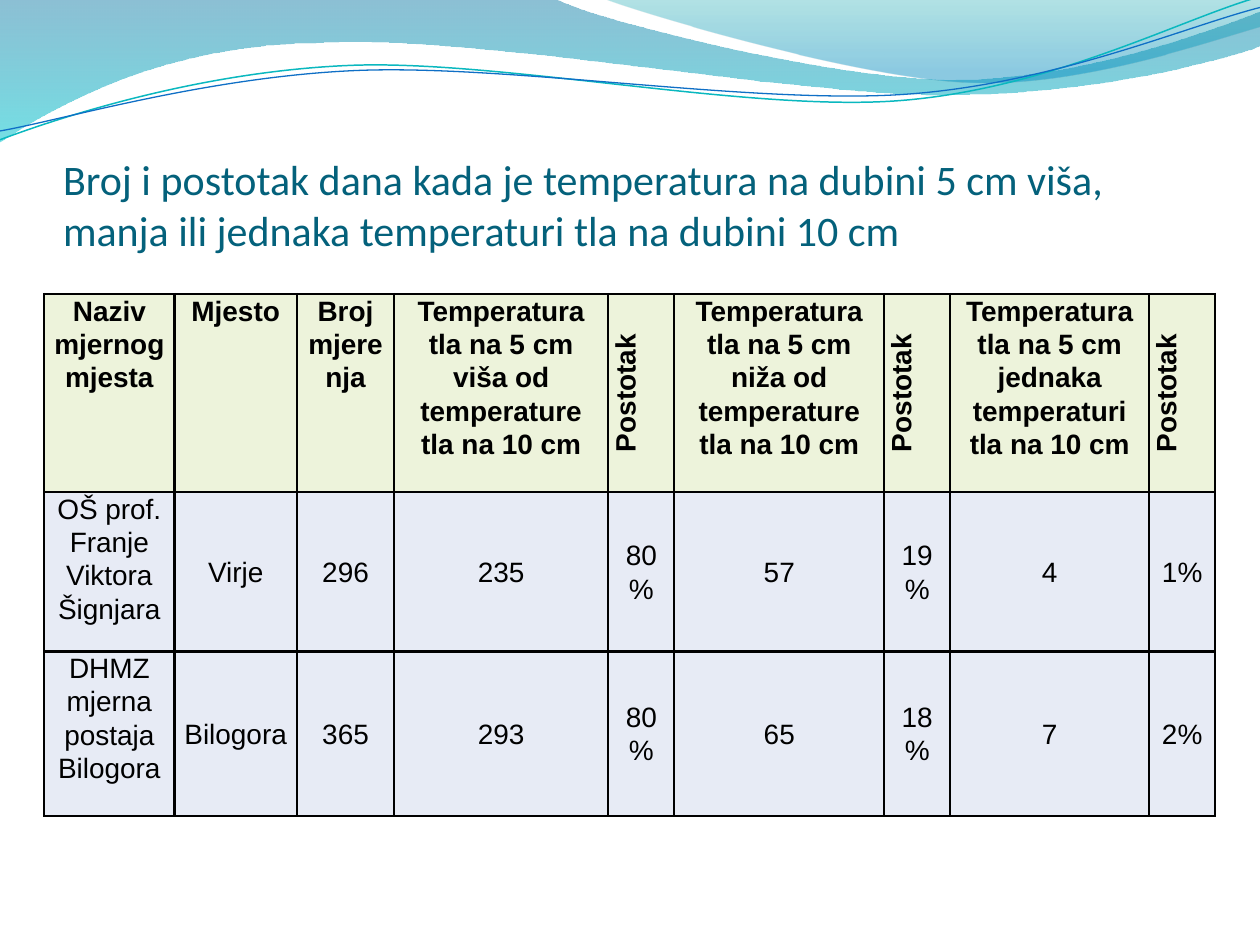
import math

import pptx
import pptx.dml.color
import pptx.enum.text
import pptx.oxml
import pptx.oxml.ns
import pptx.util

RGBColor = pptx.dml.color.RGBColor
Align = pptx.enum.text.PP_ALIGN
Anchor = pptx.enum.text.MSO_ANCHOR
qn = pptx.oxml.ns.qn
NAMESPACE = pptx.oxml.ns.nsdecls("a")

BLACK = RGBColor(0x00, 0x00, 0x00)
TITLE_BLUE = RGBColor(0x04, 0x61, 0x7B)
HEADER_GREEN = RGBColor(0xED, 0xF3, 0xDB)
BODY_LILAC = RGBColor(0xE7, 0xEB, 0xF5)
DEEP_BLUE = RGBColor(0x00, 0x74, 0xA1)
AQUA = RGBColor(0x00, 0xC6, 0xCF)
TEAL = RGBColor(0x00, 0xA1, 0xA9)
SKY_BLUE = RGBColor(0x00, 0x8B, 0xBF)
LINE_TEAL = RGBColor(0x0A, 0xB8, 0xBF)
LINE_BLUE = RGBColor(0x0F, 0x6F, 0xC6)

GRID_COLUMNS, GRID_ROWS = 100, 75
UNIT = pptx.util.Inches(0.1)
LINE_TILT = 357.3

# Outlines in grid units: a pair is a corner, six numbers are a Bézier curve.
LEFT_WAVE = [
    (0, -0.1), (44, -0.1), (47.6, 1.7, 66.4, 6.3, 75.8, 6.3),
    (85.3, 6.3, 95.8, 2.6, 100, 0.9), (100.1, 3.6),
    (98.3, 4.4, 87, 7.6, 74.6, 7.5), (62.2, 7.5, 38.2, 2.8, 25.7, 3.4),
    (12.9, 3.5, 4.6, 8.3, -0.1, 11.3), (0, -0.1),
]
RIGHT_WAVE = [
    (47.9, -0.1), (50.9, 1.1, 68.2, 6.2, 76.9, 6.5),
    (85.6, 6.9, 96.1, 3.2, 100, 2.1), (100, 0), (47.9, -0.1),
]
TEAL_LINE = [
    (0, 11.1), (4.8, 9.3, 15.8, 5.7, 27.7, 5.2),
    (39.5, 4.7, 59.3, 8.9, 71.3, 8), (83.3, 7.1, 93.8, 1.5, 99.8, -0.2),
]
BLUE_LINE = [
    (0, 10.4), (4.7, 9.6, 16.4, 6.1, 28.3, 5.6),
    (40.3, 5.1, 59.7, 8.3, 71.7, 7.5), (83.6, 6.7, 94.1, 2.1, 100, 0.6),
]

TITLE = ("Broj i postotak dana kada je temperatura na dubini 5 cm viša, "
         "manja ili jednaka temperaturi tla na dubini 10 cm")
SHARE = "Postotak"
COMPARISON = "Temperatura tla na 5 cm {} tla na 10 cm"
ROWS = [
    ["Naziv mjernog mjesta", "Mjesto", "Broj mjerenja",
     COMPARISON.format("viša od temperature"), SHARE,
     COMPARISON.format("niža od temperature"), SHARE,
     COMPARISON.format("jednaka temperaturi"), SHARE],
    ["OŠ prof. Franje Viktora Šignjara", "Virje", "296", "235", "80%",
     "57", "19%", "4", "1%"],
    ["DHMZ mjerna postaja Bilogora", "Bilogora", "365", "293", "80%",
     "65", "18%", "7", "2%"],
]
COLUMN_WIDTHS = [10.32, 9.74, 7.7, 17, 5.25, 16.65, 5.25, 15.78, 5.25]
ROW_HEIGHTS = [15.72, 12.65, 13.05]


def grid(*units):
    return [round(unit * UNIT) for unit in units]


def apply(target, values):
    for name, value in values.items():
        setattr(target, name, value)


def turn(point, degrees, pivot=(50, 5.8)):
    """Turn a grid point clockwise about the pivot."""
    angle = math.radians(degrees)
    across, down = point[0] - pivot[0], point[1] - pivot[1]
    return (pivot[0] + across * math.cos(angle) - down * math.sin(angle),
            pivot[1] + across * math.sin(angle) + down * math.cos(angle))


class SlideBuilder:
    title_font = {"name": "Calibri", "size": pptx.util.Pt(24), "bold": False}
    cell_font = {"name": "Arial", "size": pptx.util.Pt(16)}
    cell_margins = {"margin_left": pptx.util.Inches(0.07),
                    "margin_right": pptx.util.Inches(0.07),
                    "margin_top": 0, "margin_bottom": 0}
    border_width = pptx.util.Pt(1.5)
    share_indent = pptx.util.Inches(0.08)

    def __init__(self, presentation):
        self.slide = presentation.slides.add_slide(presentation.slide_layouts[5])

    def outline(self, parts, close, rotation=0):
        """Build a freeform through all points, then join curve points as Béziers."""
        points = [grid(*turn(part[index:index + 2], -rotation))
                  for part in parts for index in range(0, len(part), 2)]
        builder = self.slide.shapes.build_freeform(*points[0], scale=1.0)
        builder.add_line_segments(points[1:], close=close)
        shape = builder.convert_to_shape()
        shape.shadow.inherit = False
        shape.rotation = rotation
        segments = iter(list(shape._element.iter(qn("a:lnTo"))))
        for part in parts[1:]:
            first = next(segments)
            if len(part) == 6:
                curve = pptx.oxml.parse_xml(f"<a:cubicBezTo {NAMESPACE}/>")
                first.addprevious(curve)
                for segment in (first, next(segments), next(segments)):
                    curve.append(segment[0])
                    segment.getparent().remove(segment)
        return shape

    def wave(self, parts, stops):
        """Draw a filled wave; stops hold position, colour and opacity in percent."""
        shape = self.outline(parts, close=True)
        shape.line.fill.background()
        shape.fill.gradient()
        shape.fill.gradient_angle = 270
        for stop, (position, color, opacity) in zip(shape.fill.gradient_stops, stops):
            stop.position = position
            stop.color.rgb = color
        colors = shape._element.spPr.iter(qn("a:srgbClr"))
        for element, (position, color, opacity) in zip(colors, stops):
            element.append(pptx.oxml.parse_xml(
                f'<a:alpha {NAMESPACE} val="{opacity * 1000}"/>'))

    def wave_line(self, parts, color, width):
        shape = self.outline(parts, close=False, rotation=LINE_TILT)
        shape.fill.background()
        shape.line.color.rgb = color
        shape.line.width = pptx.util.Pt(width)

    def title(self, text, left, top, width, height):
        shape = self.slide.shapes.title
        self.slide.shapes._spTree.append(shape._element)
        box = grid(left, top, width, height)
        apply(shape, dict(zip(("left", "top", "width", "height"), box)))
        frame = shape.text_frame
        frame.text = text
        apply(frame, {"word_wrap": True, "vertical_anchor": Anchor.BOTTOM,
                      "auto_size": pptx.enum.text.MSO_AUTO_SIZE.NONE,
                      "margin_left": 0, "margin_right": 0, "margin_bottom": 0,
                      "margin_top": pptx.util.Inches(0.05)})
        paragraph = frame.paragraphs[0]
        paragraph.alignment = Align.LEFT
        apply(paragraph.font, self.title_font)
        paragraph.font.color.rgb = TITLE_BLUE

    def table(self, rows, left, top, column_widths, row_heights):
        box = grid(left, top, sum(column_widths), sum(row_heights))
        table = self.slide.shapes.add_table(len(rows), len(column_widths), *box).table
        for column, width in zip(table.columns, grid(*column_widths)):
            column.width = width
        for row, height in zip(table.rows, grid(*row_heights)):
            row.height = height
        for row_index, texts in enumerate(rows):
            for column_index, text in enumerate(texts):
                header = row_index == 0
                top_aligned = header or column_index == 0
                self.cell(table.cell(row_index, column_index), text, header, top_aligned)

    def cell(self, cell, text, header, top_aligned):
        cell.text = text
        apply(cell, self.cell_margins)
        cell.vertical_anchor = Anchor.TOP if top_aligned else Anchor.MIDDLE
        paragraph = cell.text_frame.paragraphs[0]
        apply(paragraph, {"alignment": Align.CENTER, "line_spacing": 1.07})
        apply(paragraph.font, {**self.cell_font, "bold": header})
        paragraph.font.color.rgb = BLACK
        properties = cell._tc.get_or_add_tcPr()
        if text == SHARE:
            properties.set("vert", "vert270")
            for margin in ("marL", "marR"):
                paragraph._p.get_or_add_pPr().set(margin, str(self.share_indent))
        for side in "LRTB":
            properties.append(pptx.oxml.parse_xml(
                f'<a:ln{side} {NAMESPACE} w="{self.border_width}">'
                f'<a:solidFill><a:srgbClr val="{BLACK}"/></a:solidFill></a:ln{side}>'))
        cell.fill.solid()
        cell.fill.fore_color.rgb = HEADER_GREEN if header else BODY_LILAC


def main():
    presentation = pptx.Presentation()
    presentation.slide_width, presentation.slide_height = grid(GRID_COLUMNS, GRID_ROWS)
    builder = SlideBuilder(presentation)
    builder.wave(LEFT_WAVE, [(0, DEEP_BLUE, 45), (1, AQUA, 55)])
    builder.wave(RIGHT_WAVE, [(0, TEAL, 30), (0.8, SKY_BLUE, 45)])
    builder.wave_line(TEAL_LINE, LINE_TEAL, 0.85)
    builder.wave_line(BLUE_LINE, LINE_BLUE, 0.75)
    builder.title(TITLE, 5, 7.7, 90, 12.5)
    builder.table(ROWS, 3.52, 23.33, COLUMN_WIDTHS, ROW_HEIGHTS)
    presentation.save("out.pptx")


if __name__ == "__main__":
    main()
